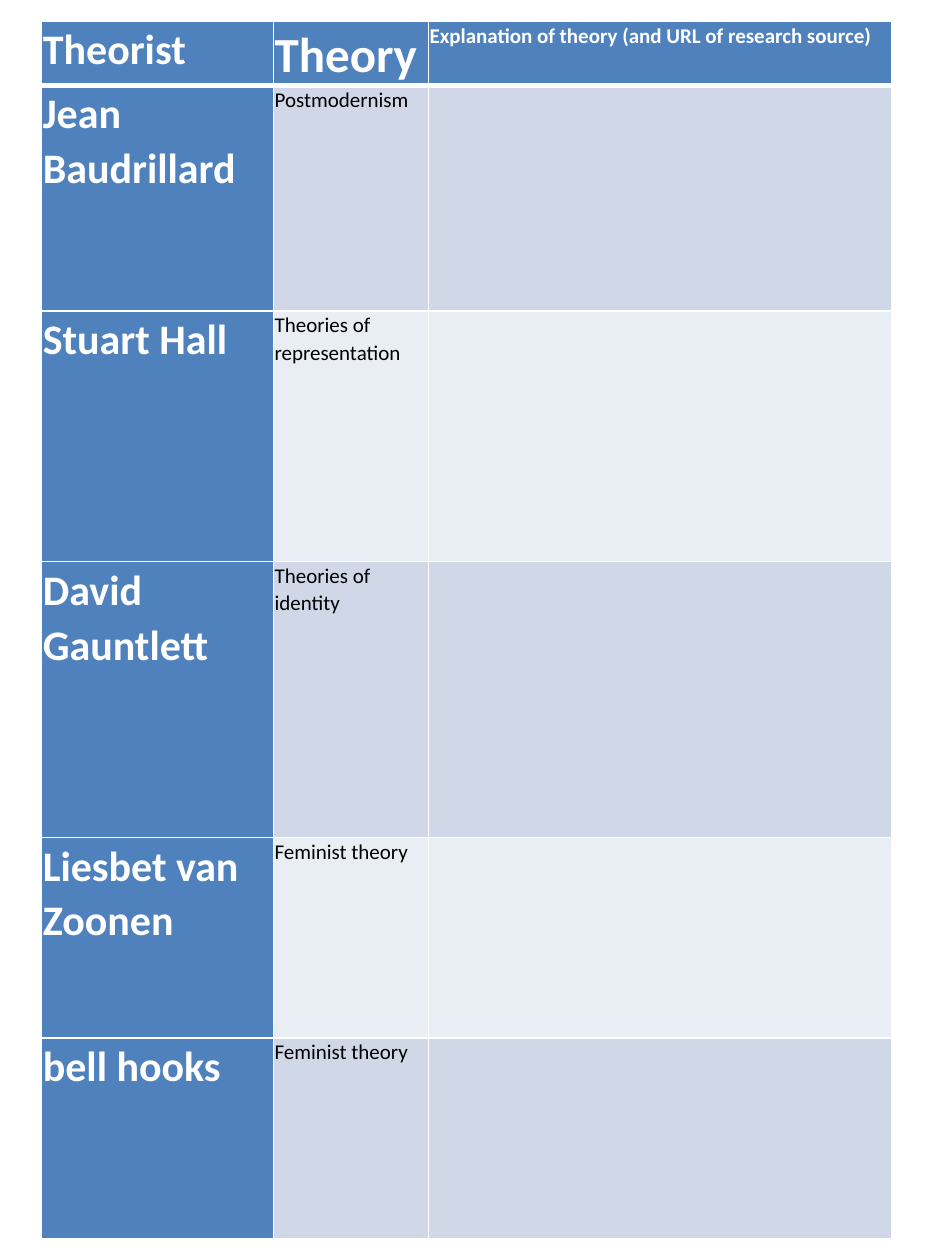
from dataclasses import dataclass

from lxml.etree import SubElement
from pptx import Presentation
from pptx.dml.color import RGBColor as RGB
from pptx.oxml.ns import qn
from pptx.util import Inches, Pt

# Grid of the table, in inches
LEFT, TOP, HEIGHT = 0.33, 0.17, 9.64
COLS = [1.84, 1.23, 3.68]
HEADER_ROW = 0.27  # grows to fit its text
INSETS = {"margin_left": Inches(0.01), "margin_right": Inches(0.01),
          "margin_top": 0, "margin_bottom": 0}

BLUE, WHITE, BLACK = "4F81BD", "FFFFFF", "000000"
BANDS = ["D0D8E8", "E9EDF4"]


@dataclass
class Theorist:
    name: str
    theory: str
    height: float


@dataclass
class Style:
    size: int
    color: str = WHITE
    bold: bool = True


HEADERS = [("Theorist", Style(24)), ("Theory", Style(28)),
           ("Explanation of theory (and URL of research source)", Style(12))]
NAME, THEORY = Style(24), Style(12, BLACK, False)
THEORISTS = [
    Theorist("Jean Baudrillard", "Postmodernism", 1.79),
    Theorist("Stuart Hall", "Theories of representation", 1.99),
    Theorist("David Gauntlett", "Theories of identity", 2.19),
    Theorist("Liesbet van Zoonen", "Feminist theory", 1.59),
    Theorist("bell hooks", "Feminist theory", 1.59),
]


def rgb(color: str) -> RGB:
    return RGB.from_string(color)


def set_borders(cell, bottom: float) -> None:
    """White lines on all sides; they come before the fill in tcPr."""
    tc_pr = cell._tc.get_or_add_tcPr()
    for side, width in {"L": 1, "R": 1, "T": 1, "B": bottom}.items():
        ln = SubElement(tc_pr, qn(f"a:ln{side}"), w=str(Pt(width)))
        SubElement(SubElement(ln, qn("a:solidFill")), qn("a:srgbClr"), val=WHITE)


def fill_cell(cell, fill: str, text: str = "", style: Style = THEORY,
              bottom: float = 1) -> None:
    set_borders(cell, bottom)
    cell.fill.solid()
    cell.fill.fore_color.rgb = rgb(fill)
    for key, value in INSETS.items():
        setattr(cell, key, value)
    if not text:
        return
    p = cell.text_frame.paragraphs[0]
    p.line_spacing = 1.07
    r = p.add_run()
    r.text = text
    fmt = {"name": "Calibri", "size": Pt(style.size), "bold": style.bold}
    for key, value in fmt.items():
        setattr(r.font, key, value)
    r.font.color.rgb = rgb(style.color)


def main() -> None:
    prs = Presentation()
    prs.slide_width, prs.slide_height = Inches(7.5), Inches(10)
    s = prs.slides.add_slide(prs.slide_layouts[6])

    # Table and its grid
    heights = [HEADER_ROW] + [t.height for t in THEORISTS]
    frame = s.shapes.add_table(len(heights), len(COLS), Inches(LEFT), Inches(TOP),
                               Inches(sum(COLS)), Inches(HEIGHT))
    table = frame.table
    for col, width in zip(table.columns, COLS):
        col.width = Inches(width)
    for row, height in zip(table.rows, heights):
        row.height = Inches(height)
    frame.height = Inches(HEIGHT)

    # Header row
    for c, (text, style) in enumerate(HEADERS):
        fill_cell(table.cell(0, c), BLUE, text, style, bottom=3)

    # One banded row for each theorist, with room for the explanation
    for i, t in enumerate(THEORISTS):
        band = BANDS[i % 2]
        name, theory, explanation = table.rows[i + 1].cells
        fill_cell(name, BLUE, t.name, NAME)
        fill_cell(theory, band, t.theory)
        fill_cell(explanation, band)

    prs.save("out.pptx")


if __name__ == "__main__":
    main()
